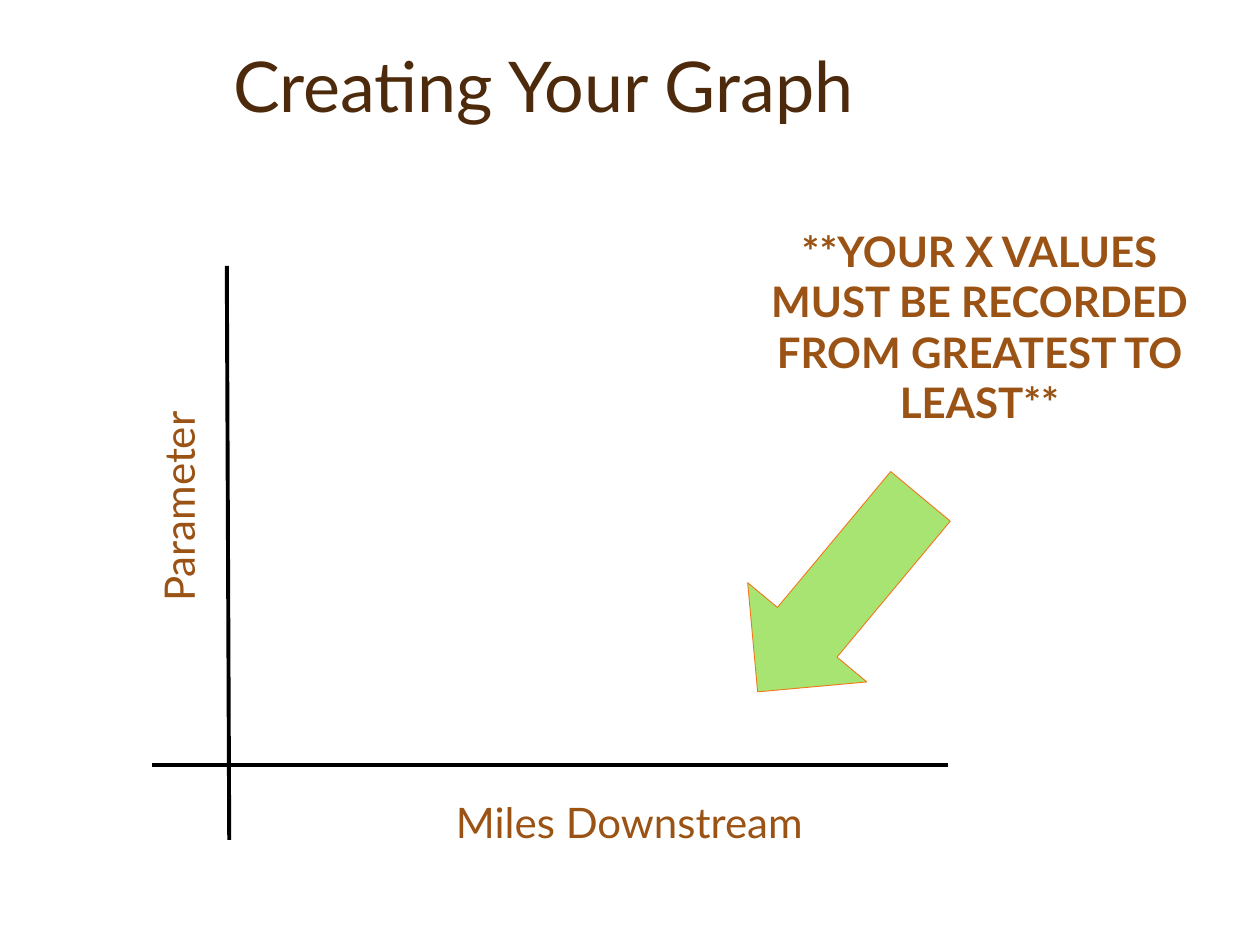
from dataclasses import dataclass

from lxml import etree
from pptx import Presentation
from pptx import util as u
from pptx.dml.color import RGBColor
from pptx.enum import shapes, text
from pptx.oxml.ns import qn


@dataclass(frozen=True)
class Theme:
    font: str = "Lato"
    title: str = "4D2A0B"
    label: str = "9A5315"
    axis: str = "000000"
    arrow: str = "A7E472"
    outline: str = "F3771A"
    title_size: int = 40
    label_size: int = 24


class Builder:
    """Draws themed elements on the current slide, with lengths in points."""

    def __init__(self, slide, theme):
        self.s, self.t = slide, theme

    def apply(self, obj, values):
        for name, value in values.items():
            setattr(obj, name, value)

    def place(self, sp, *box):
        self.apply(sp, dict(zip(("left", "top", "width", "height"), map(u.Pt, box))))

    def add_words(self, tf, words, size, color, bold=False, **layout):
        p = tf.paragraphs[0]
        self.apply(p, layout)
        r = p.add_run()
        r.text = words
        self.apply(r.font, {"name": self.t.font, "size": u.Pt(size), "bold": bold})
        r.font.color.rgb = RGBColor.from_string(color)

    def outline(self, sp, color, width):
        sp.line.color.rgb = RGBColor.from_string(color)
        sp.line.width = u.Pt(width)

    def title(self, words, *box):
        sp = self.s.shapes.title
        self.place(sp, *box)
        self.apply(sp.text_frame, {
            "vertical_anchor": text.MSO_ANCHOR.BOTTOM,
            "auto_size": text.MSO_AUTO_SIZE.NONE,
            "word_wrap": True,
        })
        self.add_words(sp.text_frame, words, self.t.title_size, self.t.title,
                       alignment=text.PP_ALIGN.LEFT, line_spacing=0.9)

    def label(self, words, *box, rotation=0, wrap=False, bold=False,
              align=text.PP_ALIGN.LEFT):
        sp = self.s.shapes.add_textbox(*map(u.Pt, box))
        sp.rotation = rotation
        self.apply(sp.text_frame, {
            "word_wrap": wrap,
            "auto_size": text.MSO_AUTO_SIZE.SHAPE_TO_FIT_TEXT,
        })
        self.add_words(sp.text_frame, words, self.t.label_size, self.t.label, bold,
                       alignment=align)

    def axis(self, *ends):
        sp = self.s.shapes.add_connector(
            shapes.MSO_CONNECTOR.STRAIGHT, *map(u.Pt, ends))
        self.outline(sp, self.t.axis, 2.25)
        etree.SubElement(sp._element.spPr, qn("a:effectLst"))

    def arrow(self, *box, rotation):
        sp = self.s.shapes.add_shape(shapes.MSO_SHAPE.LEFT_ARROW, *map(u.Pt, box))
        sp.rotation = rotation
        sp.shadow.inherit = False
        sp.fill.solid()
        sp.fill.fore_color.rgb = RGBColor.from_string(self.t.arrow)
        self.outline(sp, self.t.outline, 0.5)


def main():
    prs = Presentation()
    prs.slide_width, prs.slide_height = u.Pt(720), u.Pt(540)
    b = Builder(prs.slides.add_slide(prs.slide_layouts[5]), Theme())
    b.title("Creating Your Graph", 126, -19.5, 594, 96)
    b.axis(129.6, 152, 131, 480)
    b.axis(541.5, 437, 87, 437)
    b.label("Parameter", 28.8, 271.5, 146, 36, rotation=270,
            align=text.PP_ALIGN.CENTER)
    b.label("Miles Downstream", 253.5, 451.5, 240.5, 36)
    b.arrow(406.8, 295.2, 145.4, 88.6, rotation=309.8)
    b.label("**YOUR X VALUES MUST BE RECORDED FROM GREATEST TO LEAST**",
            426.2, 125.3, 267, 152.6, wrap=True, bold=True,
            align=text.PP_ALIGN.CENTER)
    prs.save("out.pptx")


if __name__ == "__main__":
    main()
